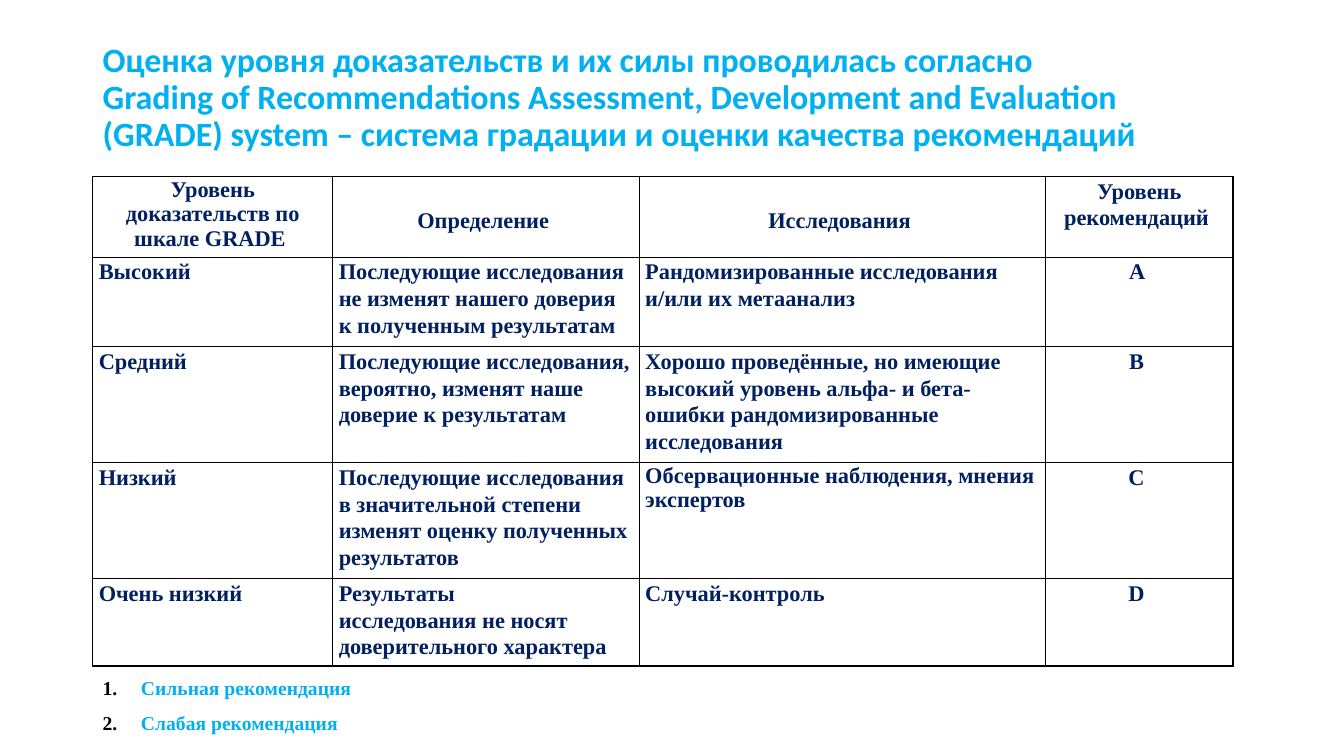
import pptx
import pptx.util
import pptx.dml.color
import pptx.enum.text
import pptx.oxml
import pptx.oxml.ns
from pptx.util import Inches

RGBColor = pptx.dml.color.RGBColor
ALIGN = pptx.enum.text.PP_ALIGN
ANCHOR = pptx.enum.text.MSO_ANCHOR

SKY = RGBColor(0x00, 0xB0, 0xF0)
NAVY = RGBColor(0x00, 0x20, 0x60)
BLACK = RGBColor(0, 0, 0)
WHITE = RGBColor(0xFF, 0xFF, 0xFF)

TITLE = (
    "Оценка уровня доказательств и их силы проводилась согласно\v"
    "Grading of Recommendations Assessment, Development and Evaluation "
    "(GRADE) system – система градации и оценки качества рекомендаций"
)
GRADES = [
    ("Уровень доказательств по шкале GRADE ", "Определение ",
     "Исследования ", "Уровень рекомендаций "),
    ("Высокий",
     "Последующие исследования не изменят нашего доверия к полученным результатам",
     "Рандомизированные исследования и/или их метаанализ", "A "),
    ("Средний",
     "Последующие исследования, вероятно, изменят наше доверие к результатам",
     "Хорошо проведённые, но имеющие высокий уровень альфа- и бета-ошибки "
     "рандомизированные исследования", "B "),
    ("Низкий",
     "Последующие исследования в значительной степени изменят оценку "
     "полученных результатов",
     "Обсервационные наблюдения, мнения экспертов", "C "),
    ("Очень низкий",
     "Результаты\nисследования не носят доверительного характера",
     "Случай-контроль", "D "),
]
COL_WIDTHS = (2.38, 3.04, 4.03, 1.86)
ROW_HEIGHTS = (0.74, 0.89, 1.06, 1.07, 0.8)
TIGHT_SPACING = {(0, 0): 0.99, (3, 2): 0.98}
STRENGTHS = ("Сильная рекомендация", "Слабая рекомендация")


class Deck:
    heading_font = "Calibri"
    body_font = "Times New Roman"

    def __init__(self):
        self.prs = pptx.Presentation()
        self.prs.slide_width = Inches(13.33)
        self.prs.slide_height = Inches(7.5)
        self.s = self.prs.slides.add_slide(self.prs.slide_layouts[6])

    def style(self, p, size, color, spacing, font=body_font):
        p.line_spacing = spacing
        p.font.name = font
        p.font.size = pptx.util.Pt(size)
        p.font.bold = True
        p.font.color.rgb = color

    def text_box(self, x, y, w, h, text):
        sp = self.s.shapes.add_textbox(Inches(x), Inches(y), Inches(w), Inches(h))
        tf = sp.text_frame
        tf.word_wrap = True
        tf.text = text
        return tf

    def title(self, x, y, w, h, text):
        tf = self.text_box(x, y, w, h, text)
        tf.vertical_anchor = ANCHOR.MIDDLE
        self.style(tf.paragraphs[0], 24.3, SKY, 0.9, self.heading_font)

    def numbered_list(self, x, y, w, h, items):
        tf = self.text_box(x, y, w, h, "\n".join(items))
        for p in tf.paragraphs:
            p.space_after = pptx.util.Pt(6.8)
            self.style(p, 14, SKY, 1.07)
            pPr = p._p.get_or_add_pPr()
            pPr.set("marL", str(Inches(0.38)))
            pPr.set("indent", str(-Inches(0.38)))
            ns = pptx.oxml.ns.nsdecls("a")
            defaults = pPr.find(pptx.oxml.ns.qn("a:defRPr"))
            for xml in (
                f'<a:buClr {ns}><a:srgbClr val="{BLACK}"/></a:buClr>',
                f'<a:buFont {ns} typeface="{self.body_font}"/>',
                f'<a:buAutoNum {ns} type="arabicPeriod"/>',
            ):
                defaults.addprevious(pptx.oxml.parse_xml(xml))

    def borders(self, cell):
        tcPr = cell._tc.get_or_add_tcPr()
        ns = pptx.oxml.ns.nsdecls("a")
        for i, side in enumerate(("lnL", "lnR", "lnT", "lnB")):
            tcPr.insert(i, pptx.oxml.parse_xml(
                f'<a:{side} {ns} w="12700"><a:solidFill>'
                f'<a:srgbClr val="{BLACK}"/></a:solidFill></a:{side}>'))

    def table(self, x, y, widths, heights, rows):
        table = self.s.shapes.add_table(
            len(rows), len(widths), Inches(x), Inches(y),
            Inches(sum(widths)), Inches(sum(heights))).table
        table.first_row = table.horz_banding = False
        for column, width in zip(table.columns, widths):
            column.width = Inches(width)
        for r, (row, height) in enumerate(zip(rows, heights)):
            table.rows[r].height = Inches(height)
            for c, text in enumerate(row):
                cell = table.cell(r, c)
                cell.text = text
                cell.margin_left = cell.margin_right = Inches(0.06)
                cell.margin_top = Inches(0.01)
                cell.margin_bottom = 0
                if r == 0 and c in (1, 2):
                    cell.vertical_anchor = ANCHOR.MIDDLE
                    cell.margin_top = Inches(0.06)
                cell.fill.solid()
                cell.fill.fore_color.rgb = WHITE
                self.borders(cell)
                for p in cell.text_frame.paragraphs:
                    centred = r == 0 or c == len(row) - 1
                    p.alignment = ALIGN.CENTER if centred else ALIGN.LEFT
                    self.style(p, 16, NAVY, TIGHT_SPACING.get((r, c), 1.07))


def main():
    deck = Deck()
    deck.title(0.92, 0.4, 11.4, 1.15, TITLE)
    deck.table(0.92, 1.75, COL_WIDTHS, ROW_HEIGHTS, GRADES)
    deck.numbered_list(0.92, 6.64, 6.67, 0.7, STRENGTHS)
    deck.prs.save("out.pptx")


if __name__ == "__main__":
    main()
